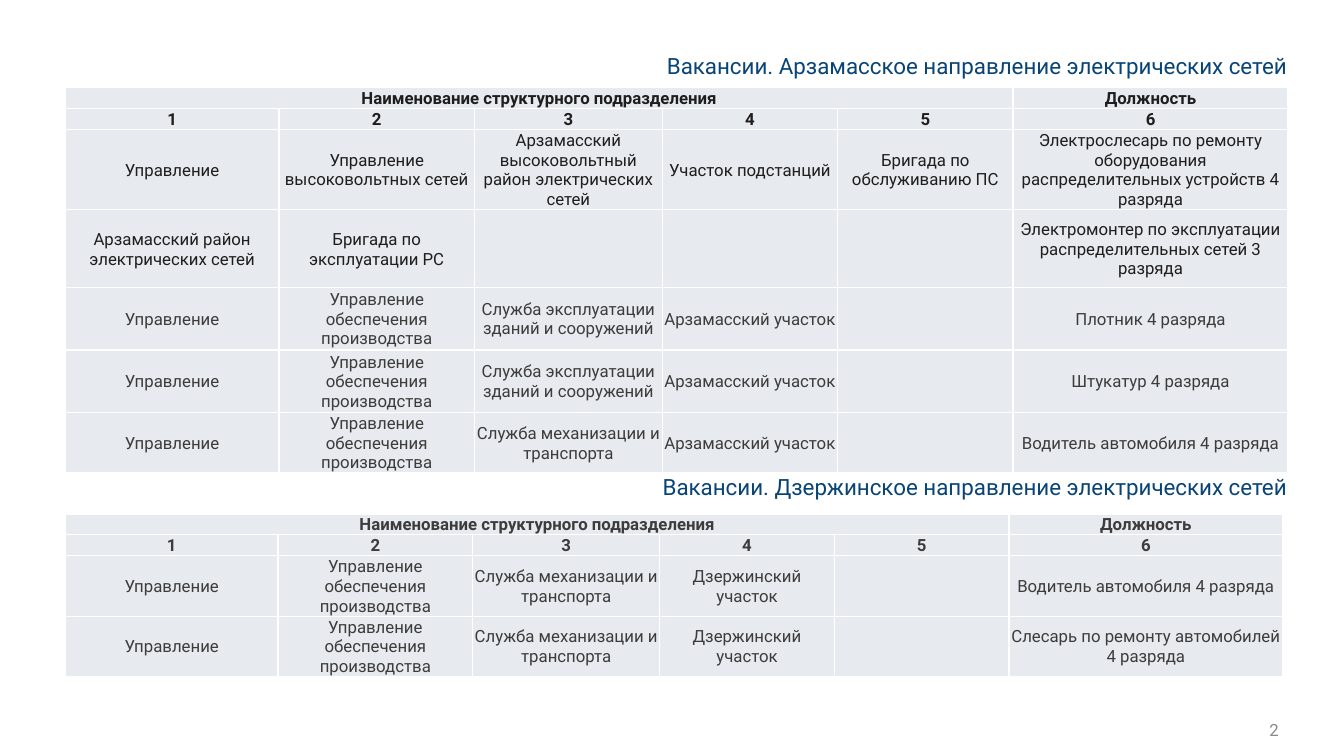
import pptx
import pptx.dml.color
import pptx.enum.text
import pptx.oxml
import pptx.oxml.ns
import pptx.util

Cm, Pt = pptx.util.Cm, pptx.util.Pt
ALIGN, ANCHOR = pptx.enum.text.PP_ALIGN, pptx.enum.text.MSO_ANCHOR

FONT = "Roboto"
BLUE, BLACK, DARK, GREY = "094476", "1E1E1E", "3C3C3C", "8A8A8A"
CELL_FILL, BORDER = "E7EAEF", "FFFFFF"

HEADINGS = [
    ("Вакансии. Арзамасское направление электрических сетей", 1.4),
    ("Вакансии. Дзержинское направление электрических сетей", 11.99),
]
PAGE_NUMBER = "2"

HEADER = [
    ["Наименование структурного подразделения", "", "", "", "", "Должность"],
    ["1", "2", "3", "4", "5", "6"],
]
SUPPLY = ["Управление", "Управление обеспечения производства"]
BUILDINGS = SUPPLY + ["Служба эксплуатации зданий и сооружений", "Арзамасский участок", ""]
TRANSPORT = SUPPLY + ["Служба механизации и транспорта"]

COLUMNS = [5.38, 4.93, 4.73, 4.42, 4.42, 6.93]
HEADER_HEIGHTS = [0.51, 0.53]
TABLE_LEFT = 1.65
TABLES = [
    dict(top=2.21, scale=1, color=BLACK, header=HEADER, heights=[2, 1.98], rows=[
        ["Управление", "Управление высоковольтных сетей",
         "Арзамасский высоковольтный район электрических сетей",
         "Участок подстанций", "Бригада по обслуживанию ПС",
         "Электрослесарь по ремонту оборудования распределительных устройств 4 разряда"],
        ["Арзамасский район электрических сетей", "Бригада по эксплуатации РС", "", "", "",
         "Электромонтер по эксплуатации распределительных сетей 3 разряда"],
    ]),
    dict(top=7.24, scale=1, color=DARK, header=[], heights=[1.58, 1.58, 1.52], rows=[
        BUILDINGS + ["Плотник 4 разряда"],
        BUILDINGS + ["Штукатур 4 разряда"],
        TRANSPORT + ["Арзамасский участок", "", "Водитель автомобиля 4 разряда"],
    ]),
    dict(top=12.95, scale=30.68 / 30.81, color=DARK, header=HEADER, heights=[1.52, 1.52], rows=[
        TRANSPORT + ["Дзержинский участок", "", "Водитель автомобиля 4 разряда"],
        TRANSPORT + ["Дзержинский участок", "", "Слесарь по ремонту автомобилей 4 разряда"],
    ]),
]


def rgb(value):
    return pptx.dml.color.RGBColor.from_string(value)


def set_attributes(target, **values):
    for name, value in values.items():
        setattr(target, name, value)


def write(frame, text, size, color, align, bold=False, spacing=None):
    frame.text = text
    paragraph = frame.paragraphs[0]
    set_attributes(paragraph, alignment=align, line_spacing=spacing)
    font = paragraph.runs[0].font
    set_attributes(font, name=FONT, size=Pt(size), bold=bold)
    font.color.rgb = rgb(color)


def place_text(shape, box, text, size, color, anchor, spacing=None):
    """Position a right-aligned text shape and fill it."""
    left, top, width, height = map(Cm, box)
    set_attributes(shape, left=left, top=top, width=width, height=height)
    set_attributes(shape.text_frame, margin_left=0, margin_right=0, margin_top=0,
                   margin_bottom=0, word_wrap=True, vertical_anchor=anchor,
                   auto_size=pptx.enum.text.MSO_AUTO_SIZE.NONE)
    write(shape.text_frame, text, size, color, ALIGN.RIGHT, spacing=spacing)


def add_borders(cell):
    properties = cell._tc.get_or_add_tcPr()
    for index, side in enumerate("LRTB"):
        properties.insert(index, pptx.oxml.parse_xml(
            f'<a:ln{side} {pptx.oxml.ns.nsdecls("a")} w="{Pt(1)}"><a:solidFill>'
            f'<a:srgbClr val="{BORDER}"/></a:solidFill></a:ln{side}>'))


def add_vacancies(slide, top, scale, color, header, heights, rows):
    rows = header + rows
    heights = HEADER_HEIGHTS[:len(header)] + heights
    widths = [width * scale for width in COLUMNS]
    table = slide.shapes.add_table(
        len(rows), len(widths), Cm(TABLE_LEFT), Cm(top),
        Cm(sum(widths)), Cm(sum(heights))).table
    for column, width in zip(table.columns, widths):
        column.width = Cm(width)
    for row, height in zip(table.rows, heights):
        row.height = Cm(height)
    for row_index, texts in enumerate(rows):
        for column_index, text in enumerate(texts):
            cell = table.cell(row_index, column_index)
            cell.fill.solid()
            cell.fill.fore_color.rgb = rgb(CELL_FILL)
            add_borders(cell)
            set_attributes(cell, vertical_anchor=ANCHOR.MIDDLE, margin_left=Cm(0.03),
                           margin_right=Cm(0.03), margin_top=Cm(0.03), margin_bottom=0)
            if text:
                write(cell.text_frame, text, 12, color, ALIGN.CENTER,
                      bold=row_index < len(header))
    if header:
        table.cell(0, 0).merge(table.cell(0, 4))


def main():
    presentation = pptx.Presentation()
    set_attributes(presentation, slide_width=Cm(33.87), slide_height=Cm(19.05))
    slide = presentation.slides.add_slide(presentation.slide_layouts[5])
    shapes = slide.shapes
    heading_shapes = [shapes.title, shapes.add_textbox(0, 0, 0, 0)]
    for shape, (text, top) in zip(heading_shapes, HEADINGS):
        place_text(shape, (16.64, top, 15.8, 0.61), text, 16, BLUE, ANCHOR.TOP, 0.9)
    for table in TABLES:
        add_vacancies(slide, **table)
    place_text(shapes.add_textbox(0, 0, 0, 0), (30.78, 18.16, 1.45, 0.46),
               PAGE_NUMBER, 12, GREY, ANCHOR.MIDDLE)
    presentation.save("out.pptx")


if __name__ == "__main__":
    main()
